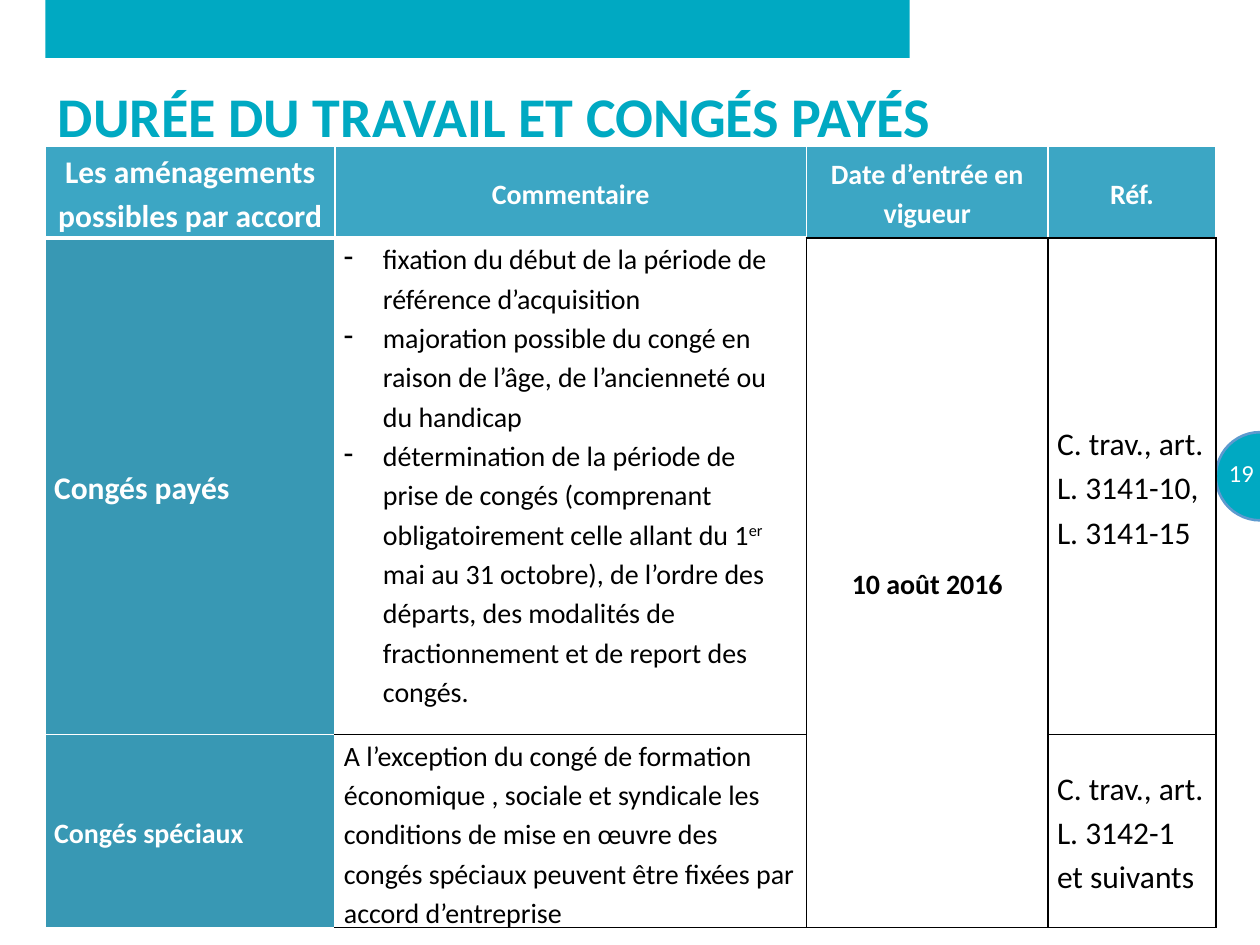
from lxml import etree
from pptx import Presentation
from pptx import util as u
from pptx.dml.color import RGBColor
from pptx.enum import shapes, text
from pptx.oxml import ns

TEAL = RGBColor(0x00, 0xA9, 0xC2)
RIM = RGBColor(0x5D, 0x9A, 0xCF)
HEAD = RGBColor(0x3C, 0xA6, 0xC4)
SIDE = RGBColor(0x38, 0x98, 0xB4)
WHITE = RGBColor(0xFF, 0xFF, 0xFF)
BLACK = RGBColor(0x00, 0x00, 0x00)
LEFT, MID = text.PP_ALIGN.LEFT, text.PP_ALIGN.CENTER

deck = Presentation()
deck.slide_width, deck.slide_height = u.Inches(10), u.Inches(7.5)
wide, high = deck.slide_width / 100, deck.slide_height / 100
slide = deck.slides.add_slide(deck.slide_layouts[6])


def place(x, y, w, h):
    return [u.Emu(round(n)) for n in (x * wide, y * high, w * wide, h * high)]


def style(para, size, color, bold, align):
    para.alignment = align
    font = para.font
    font.name, font.size, font.bold = "Calibri", u.Pt(size), bold
    font.color.rgb = color


forms = shapes.MSO_SHAPE
for kind, spot, rim in (
    (forms.RECTANGLE, (3.6, 0, 68.6, 6.13), None),
    (forms.OVAL, (96.5, 45.73, 7, 9.33), RIM),
):
    shape = slide.shapes.add_shape(kind, *place(*spot))
    shape.shadow.inherit = False
    shape.fill.solid()
    shape.fill.fore_color.rgb = TEAL
    if rim:
        shape.line.color.rgb = rim
        shape.line.width = u.Pt(1.5)
    else:
        shape.line.fill.background()

for words, spot, size, color, bold, align, anchor in (
    ("19", (96.2, 47.33, 4.3, 5.33), 14, WHITE, False, text.PP_ALIGN.RIGHT, text.MSO_ANCHOR.MIDDLE),
    ("DURÉE DU TRAVAIL ET CONGÉS PAYÉS", (3.6, 8, 92.9, 10.27), 32, TEAL, True, LEFT, text.MSO_ANCHOR.TOP),
):
    frame = slide.shapes.add_textbox(*place(*spot)).text_frame
    frame.word_wrap = True
    frame.vertical_anchor = anchor
    frame.text = words
    style(frame.paragraphs[0], size, color, bold, align)

cols, rows = (23, 37.4, 19.2, 13.3), (9.73, 52.53, 19.6)
grid = slide.shapes.add_table(
    len(rows), len(cols), *place(3.6, 15.47, sum(cols), sum(rows))
).table
grid.first_row = grid.horz_banding = False
for col, share in zip(grid.columns, cols):
    col.width = round(share * wide)
for row, share in zip(grid.rows, rows):
    row.height = round(share * high)
grid.cell(1, 2).merge(grid.cell(2, 2))

items = (
    "fixation du début de la période de référence d’acquisition",
    "majoration possible du congé en raison de l’âge, de l’ancienneté ou du handicap",
    "détermination de la période de prise de congés (comprenant obligatoirement celle allant du 1^er^ mai au 31 octobre), "
    "de l’ordre des départs, des modalités de fractionnement et de report des congés.",
)
special = (
    "A l’exception du congé de formation économique , sociale et syndicale les conditions "
    "de mise en œuvre des congés spéciaux peuvent être fixées par accord d’entreprise"
)
cells = (
    (
        (("Les aménagements possibles par accord",), 18),
        (("Commentaire",), 16),
        (("Date d’entrée en vigueur",), 16),
        (("Réf.",), 16),
    ),
    (
        (("Congés payés",), 18),
        (items, 16),
        (("10 août 2016",), 16),
        (("C. trav., art. L. 3141-10, L. 3141-15",), 18),
    ),
    (
        (("Congés spéciaux",), 16),
        ((special,), 16),
        ((), 16),
        (("C. trav., art. L. 3142-1 et suivants",), 18),
    ),
)

for r, line in enumerate(cells):
    for c, (paras, size) in enumerate(line):
        cell = grid.cell(r, c)
        top, side = r == 0, c == 0
        light = top or side
        edges = dict.fromkeys("LRTB", (WHITE if light else BLACK, 1))
        if top:
            edges["B"] = (WHITE, 3) if c < 2 else (BLACK, 1)
        elif c == 1:
            edges["L"] = (WHITE, 1)
            if r == 1:
                edges["T"] = (WHITE, 3)
        elif side and r == 1:
            edges["T"] = (WHITE, 3)
        props = cell._tc.get_or_add_tcPr()
        for edge, (color, width) in edges.items():
            rule = etree.SubElement(props, ns.qn(f"a:ln{edge}"), w=str(u.Pt(width)))
            fill = etree.SubElement(rule, ns.qn("a:solidFill"))
            etree.SubElement(fill, ns.qn("a:srgbClr"), val=str(color))
        cell.fill.solid()
        cell.fill.fore_color.rgb = HEAD if top else SIDE if side else WHITE
        cell.margin_left = cell.margin_right = u.Inches(0.05 if top else 0.07)
        cell.margin_top = cell.margin_bottom = 0
        body = c == 1 and not top
        cell.vertical_anchor = text.MSO_ANCHOR.TOP if body else text.MSO_ANCHOR.MIDDLE
        frame = cell.text_frame
        for i, words in enumerate(paras):
            para = frame.add_paragraph() if i else frame.paragraphs[0]
            for j, part in enumerate(words.split("^")):
                run = para.add_run()
                run.text = part
                if j % 2:
                    run._r.get_or_add_rPr().set("baseline", "30000")
            style(para, size, WHITE if light else BLACK, light or c == 2, MID if top or c == 2 else LEFT)
            para.line_spacing = 1.15
            if c == 2 or top and c:
                para.space_after = u.Pt(10)
            if paras is items:
                props = para._p.get_or_add_pPr()
                dent = u.Inches(0.31)
                props.set("marL", str(dent))
                props.set("indent", str(-dent))
                mark = etree.Element(ns.qn("a:buChar"), char="-")
                props.find(ns.qn("a:defRPr")).addprevious(mark)

deck.save("out.pptx")
